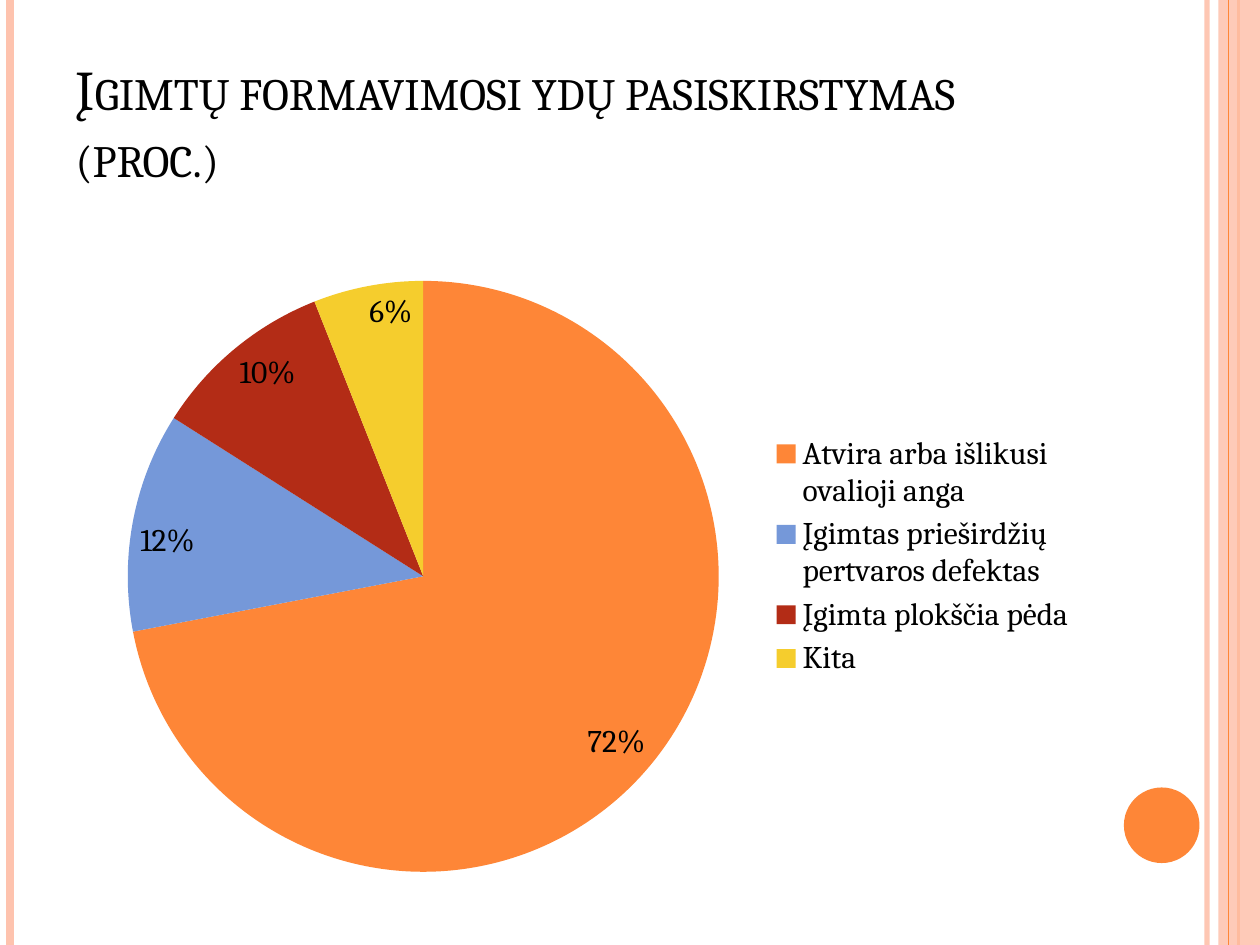
import pptx
import pptx.chart.data
import pptx.dml.color
import pptx.enum.chart
import pptx.enum.shapes
import pptx.enum.text
import pptx.oxml.ns
import pptx.oxml.xmlchemy
import pptx.util
from dataclasses import dataclass

Inches = pptx.util.Inches
Pt = pptx.util.Pt
qn = pptx.oxml.ns.qn


def rgb(value):
    return pptx.dml.color.RGBColor.from_string(value)


def new_element(tag, value=None):
    element = pptx.oxml.xmlchemy.OxmlElement(tag)
    if value is not None:
        element.set("val", str(value))
    return element


@dataclass(frozen=True)
class Theme:
    font: str = "Cambria"
    title_size: int = 32
    chart_size: int = 18
    text: str = "000000"
    accent: str = "FE8637"
    pale: str = "FEC3AE"
    slices: tuple = ("FE8637", "7598D9", "B32C16", "F5CD2D")


class SlideBuilder:
    def __init__(self, slide, theme):
        self.slide = slide
        self.theme = theme

    def set_opacity(self, properties, percent):
        color = properties.find(".//" + qn("a:srgbClr"))
        color.append(new_element("a:alpha", percent * 1000))

    def rule(self, x, color, width, opacity=100):
        """Full-height vertical line."""
        stripe = self.slide.shapes.add_connector(
            pptx.enum.shapes.MSO_CONNECTOR.STRAIGHT,
            Inches(x), 0, Inches(x), Inches(7.5))
        stripe.line.color.rgb = rgb(color)
        stripe.line.width = Pt(width)
        properties = stripe._element.spPr
        if opacity < 100:
            self.set_opacity(properties, opacity)
        properties.append(new_element("a:effectLst"))

    def block(self, kind, box, color, opacity=100):
        """Plain filled shape without outline."""
        block = self.slide.shapes.add_shape(kind, *map(Inches, box))
        block.shadow.inherit = False
        block.fill.solid()
        block.fill.fore_color.rgb = rgb(color)
        block.line.fill.background()
        if opacity < 100:
            self.set_opacity(block._element.spPr, opacity)

    def title(self, text, box):
        heading = self.slide.shapes.title
        heading.left, heading.top, heading.width, heading.height = map(Inches, box)
        frame = heading.text_frame
        frame.text = text
        frame.word_wrap = True
        frame.vertical_anchor = pptx.enum.text.MSO_ANCHOR.BOTTOM
        paragraph = frame.paragraphs[0]
        paragraph.alignment = pptx.enum.text.PP_ALIGN.LEFT
        run = paragraph.runs[0]
        self.style_font(run.font, self.theme.title_size)
        run.font._element.set("cap", "small")

    def style_font(self, font, size):
        font.name = self.theme.font
        font.size = Pt(size)
        font.color.rgb = rgb(self.theme.text)

    def chart_layout(self, x, y, w, h, inner=False):
        """Manual layout, in fractions of the chart area."""
        layout = new_element("c:layout")
        manual = new_element("c:manualLayout")
        layout.append(manual)
        settings = [("layoutTarget", "inner")] if inner else []
        settings += [("xMode", "edge"), ("yMode", "edge"),
                     ("x", x), ("y", y), ("w", w), ("h", h)]
        for name, value in settings:
            manual.append(new_element("c:" + name, value))
        return layout

    def pie(self, shares, box):
        data = pptx.chart.data.CategoryChartData(number_format="0%")
        data.categories = list(shares)
        data.add_series("Series 1", list(shares.values()))
        chart = self.slide.shapes.add_chart(
            pptx.enum.chart.XL_CHART_TYPE.PIE, *map(Inches, box), data).chart
        chart.has_title = False
        self.style_font(chart.font, self.theme.chart_size)

        # Slices and their labels
        plot = chart.plots[0]
        plot.vary_by_categories = True
        for index, color in enumerate(self.theme.slices):
            fill = plot.series[0].points[index].format.fill
            fill.solid()
            fill.fore_color.rgb = rgb(color)
        plot.has_data_labels = True
        labels = plot.data_labels
        labels.show_value = True
        labels.show_percentage = False
        labels.number_format = "0%"
        labels.number_format_is_linked = False
        labels.position = pptx.enum.chart.XL_LABEL_POSITION.INSIDE_END
        self.style_font(labels.font, self.theme.chart_size)

        # Legend and placement within the chart
        chart.has_legend = True
        legend = chart.legend
        legend.position = pptx.enum.chart.XL_LEGEND_POSITION.RIGHT
        legend.include_in_layout = False
        self.style_font(legend.font, self.theme.chart_size)
        area = plot._element.getparent()
        for parent in (area, legend._element):
            for old in parent.findall(qn("c:layout")):
                parent.remove(old)
        area.insert(0, self.chart_layout(0.06, 0.09, 0.58, 0.88, inner=True))
        legend._element.find(qn("c:legendPos")).addnext(
            self.chart_layout(0.68, 0.31, 0.31, 0.38))


def main():
    presentation = pptx.Presentation()
    presentation.slide_width = Inches(10)
    presentation.slide_height = Inches(7.5)
    theme = Theme()
    slide = presentation.slides.add_slide(presentation.slide_layouts[5])
    builder = SlideBuilder(slide, theme)
    shapes = pptx.enum.shapes.MSO_SHAPE

    # Side stripes and dot
    builder.rule(9.58, theme.pale, 3, opacity=93)
    builder.rule(0.08, theme.pale, 4.5)
    builder.rule(9.83, theme.accent, 1.5)
    builder.block(shapes.RECTANGLE, (9.67, 0, 0.33, 7.5), theme.pale, opacity=87)
    builder.rule(9.75, theme.accent, 0.75)
    builder.block(shapes.OVAL, (8.92, 6.25, 0.6, 0.6), theme.accent)

    # Title and distribution chart
    builder.title("Įgimtų formavimosi ydų pasiskirstymas (proc.)",
                  (0.5, 0.3, 8.17, 1.25))
    builder.pie({
        "Atvira arba išlikusi ovalioji anga": 0.72,
        "Įgimtas prieširdžių pertvaros defektas": 0.12,
        "Įgimta plokščia pėda": 0.1,
        "Kita": 0.06,
    }, (0.5, 1.75, 8.17, 5.33))

    presentation.save("out.pptx")


if __name__ == "__main__":
    main()
